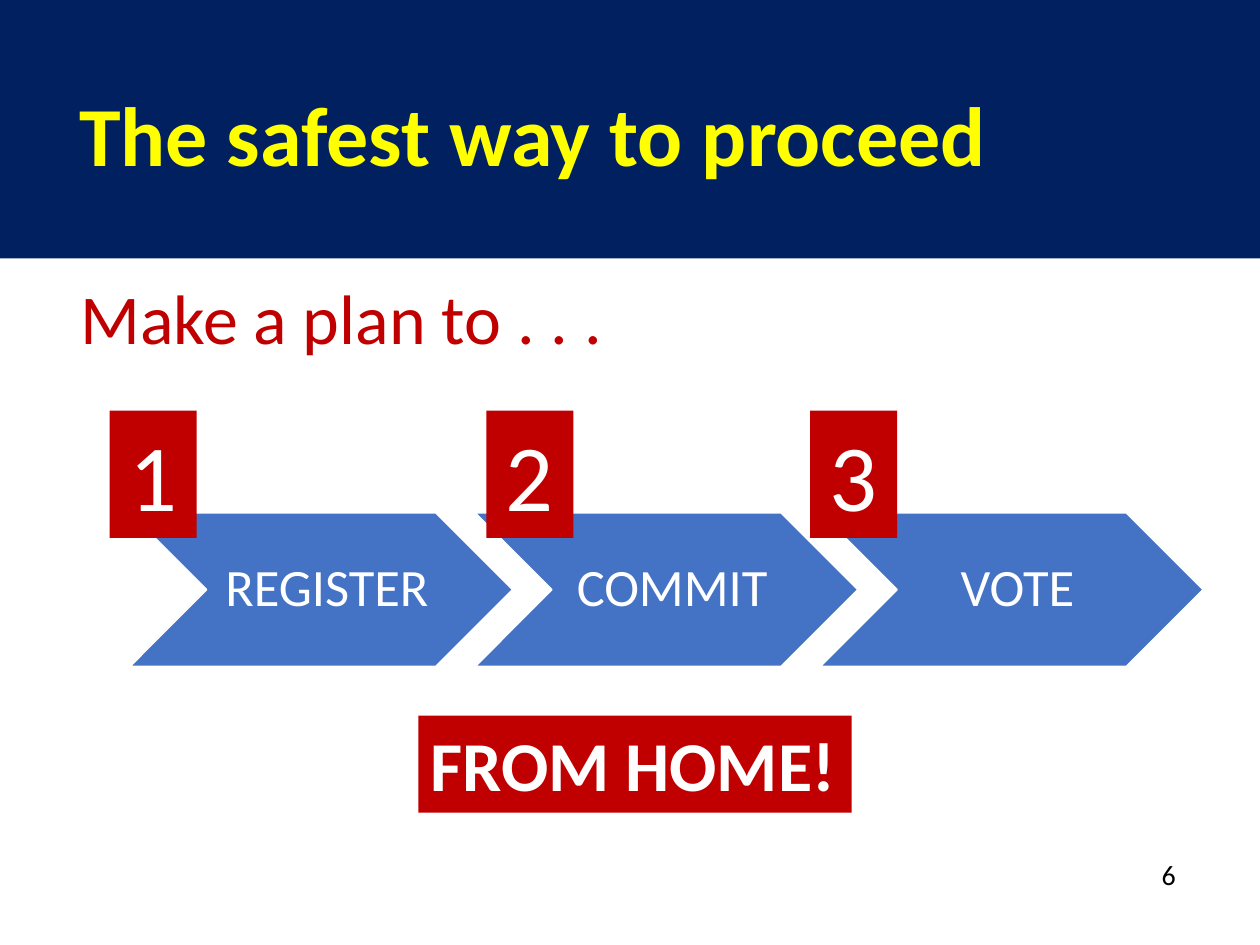
from pptx import Presentation
from pptx import util as u
from pptx.dml.color import RGBColor
from pptx.enum import shapes, text

COLORS = {
    "navy": "002060",
    "yellow": "FFFF00",
    "blue": "4472C4",
    "red": "C00000",
    "white": "FFFFFF",
    "black": "000000",
}
FONT = "Calibri"
SHAPE = shapes.MSO_SHAPE
ALIGN = text.PP_ALIGN
ANCHOR = text.MSO_ANCHOR


def color(name):
    return RGBColor.from_string(COLORS[name])


def write(tf, words, size, fill="white", bold=False, align=ALIGN.LEFT,
          anchor=ANCHOR.TOP, spacing=None, insets=(0.1, 0.05, 0.1, 0.05)):
    tf.word_wrap = True
    tf.vertical_anchor = anchor
    tf.margin_left, tf.margin_top, tf.margin_right, tf.margin_bottom = map(u.Inches, insets)
    p = tf.paragraphs[0]
    p.alignment = align
    if spacing:
        p.line_spacing = spacing
    r = p.add_run()
    r.text = words
    r.font.name = FONT
    r.font.size = u.Pt(size)
    r.font.bold = bold
    r.font.color.rgb = color(fill)


class Deck:
    def __init__(self, prs):
        self.s = prs.slides.add_slide(prs.slide_layouts[6])

    def shape(self, kind, box, fill, line=None):
        sp = self.s.shapes.add_shape(kind, *map(u.Inches, box))
        sp.shadow.inherit = False
        sp.fill.solid()
        sp.fill.fore_color.rgb = color(fill)
        if line:
            sp.line.color.rgb = color(line)
            sp.line.width = u.Pt(1)
        else:
            sp.line.fill.background()
        return sp

    def label(self, box, words, size, **style):
        sp = self.s.shapes.add_textbox(*map(u.Inches, box))
        write(sp.text_frame, words, size, **style)

    def block(self, box, words, size, **style):
        sp = self.shape(SHAPE.RECTANGLE, box, "red")
        write(sp.text_frame, words, size, **style)

    def step(self, left, words):
        top, width, height = 4.07, 3.04, 1.22
        point = height / 2
        sp = self.shape(SHAPE.CHEVRON, (left, top, width, height), "blue", "white")
        sp.adjustments[0] = 0.5
        self.label((left + point, top, width - 2 * point, height), words, 30,
                   align=ALIGN.CENTER, anchor=ANCHOR.MIDDLE, spacing=0.9,
                   insets=(0.13, 0.04, 0.04, 0.04))


def main():
    prs = Presentation()
    prs.slide_width, prs.slide_height = u.Inches(10), u.Inches(7.5)
    deck = Deck(prs)

    # Title band
    deck.shape(SHAPE.RECTANGLE, (0, 0, 10, 2.05), "navy")
    deck.label((0.53, 0.33, 8.09, 1.45), "The safest way to proceed", 48,
               fill="yellow", bold=True, anchor=ANCHOR.MIDDLE)

    # Process steps
    for i, words in enumerate(("REGISTER", "COMMIT", "VOTE")):
        deck.step(1.03 + 2.74 * i, words)

    # Step numbers
    for number, left in enumerate((0.87, 3.86, 6.43), 1):
        deck.block((left, 3.26, 0.69, 1.01), str(number), 54, align=ALIGN.CENTER)

    # Slide number, closing call and lead-in
    deck.label((7.41, 6.76, 2.02, 0.37), "6", 16, fill="black", align=ALIGN.RIGHT)
    deck.block((3.32, 5.68, 3.44, 0.77), "FROM HOME!", 40, bold=True)
    deck.label((0.54, 2.13, 4.84, 0.77), "Make a plan to . . .", 40, fill="red")

    prs.save("out.pptx")


if __name__ == "__main__":
    main()
